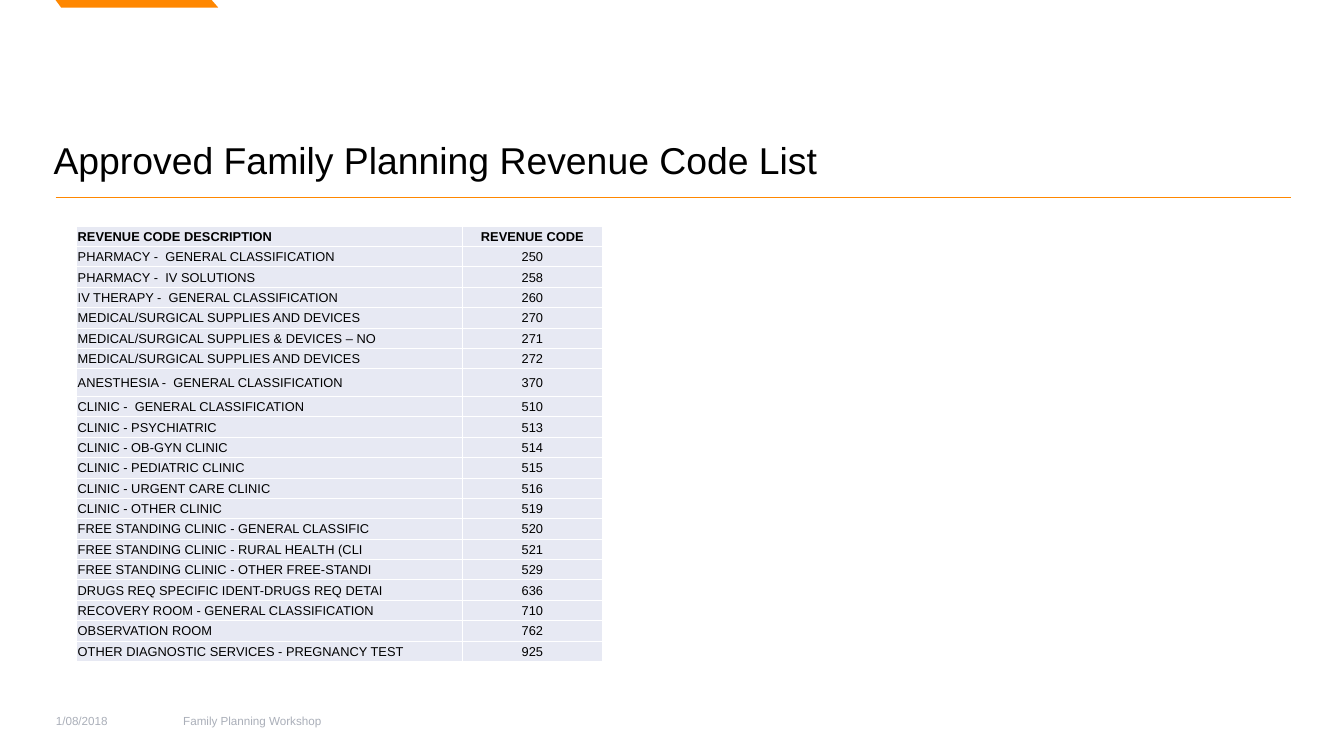
from pptx import Presentation, util as u
from pptx.dml.color import RGBColor
from pptx.enum import shapes, text
from pptx.oxml import ns, xmlchemy

Cm = u.Cm

REVENUE_CODES = [
    ("REVENUE CODE DESCRIPTION", "REVENUE CODE"),
    ("PHARMACY -  GENERAL CLASSIFICATION", "250"),
    ("PHARMACY -  IV SOLUTIONS", "258"),
    ("IV THERAPY -  GENERAL CLASSIFICATION", "260"),
    ("MEDICAL/SURGICAL SUPPLIES AND DEVICES", "270"),
    ("MEDICAL/SURGICAL SUPPLIES & DEVICES – NO", "271"),
    ("MEDICAL/SURGICAL SUPPLIES AND DEVICES", "272"),
    ("ANESTHESIA -  GENERAL CLASSIFICATION", "370"),
    ("CLINIC -  GENERAL CLASSIFICATION", "510"),
    ("CLINIC - PSYCHIATRIC", "513"),
    ("CLINIC - OB-GYN CLINIC", "514"),
    ("CLINIC - PEDIATRIC CLINIC", "515"),
    ("CLINIC - URGENT CARE CLINIC", "516"),
    ("CLINIC - OTHER CLINIC", "519"),
    ("FREE STANDING CLINIC - GENERAL CLASSIFIC", "520"),
    ("FREE STANDING CLINIC - RURAL HEALTH (CLI", "521"),
    ("FREE STANDING CLINIC - OTHER FREE-STANDI", "529"),
    ("DRUGS REQ SPECIFIC IDENT-DRUGS REQ DETAI", "636"),
    ("RECOVERY ROOM - GENERAL CLASSIFICATION", "710"),
    ("OBSERVATION ROOM", "762"),
    ("OTHER DIAGNOSTIC SERVICES - PREGNANCY TEST", "925"),
]
TALL_ROW = 7


def colour(value):
    return RGBColor.from_string(value)


class PageBuilder:
    FONT, INK, ACCENT = "Arial", "000000", "FF8700"
    MUTED, CELL, BORDER = "AAAFB9", "E7E9F3", "FFFFFF"

    def __init__(self, deck):
        self.page = deck.slides.add_slide(deck.slide_layouts[5])

    def style(self, para, size, ink, bold=False, align=text.PP_ALIGN.LEFT):
        para.alignment = align
        para.font.name, para.font.size, para.font.bold = self.FONT, u.Pt(size), bold
        para.font.color.rgb = colour(ink)

    def frame(self, box, words, size, ink, anchor, inset_x, inset_y):
        frame = box.text_frame
        frame.text = words
        frame.word_wrap = True
        frame.auto_size = text.MSO_AUTO_SIZE.NONE
        frame.vertical_anchor = anchor
        frame.margin_left = frame.margin_right = Cm(inset_x)
        frame.margin_top = frame.margin_bottom = Cm(inset_y)
        self.style(frame.paragraphs[0], size, ink)

    def title(self, words, left, top, width, height):
        box = self.page.shapes.title
        box.left, box.top, box.width, box.height = map(Cm, (left, top, width, height))
        self.frame(box, words, 32, self.INK, text.MSO_ANCHOR.TOP, 0.25, 0.25)

    def footer(self, words, left, width):
        box = self.page.shapes.add_textbox(Cm(left), Cm(21.18), Cm(width), Cm(1.22))
        self.frame(box, words, 10, self.MUTED, text.MSO_ANCHOR.MIDDLE, 0.36, 0.18)

    def rule(self, left, right, top):
        line = self.page.shapes.add_connector(
            shapes.MSO_CONNECTOR.STRAIGHT, Cm(left), Cm(top), Cm(right), Cm(top))
        line.line.color.rgb = colour(self.ACCENT)
        line.line.width = u.Pt(1)
        line._element.spPr.append(xmlchemy.OxmlElement("a:effectLst"))

    def tab(self, corners):
        points = [(Cm(x), Cm(y)) for x, y in corners]
        outline = self.page.shapes.build_freeform(*points[0])
        outline.add_line_segments(points[1:], close=True)
        shape = outline.convert_to_shape()
        shape.shadow.inherit = False
        shape.fill.solid()
        shape.fill.fore_color.rgb = colour(self.ACCENT)
        shape.line.fill.background()

    def borders(self, cell):
        properties = cell._tc.get_or_add_tcPr()
        for position, side in enumerate(("a:lnL", "a:lnR", "a:lnT", "a:lnB")):
            line = xmlchemy.OxmlElement(side)
            line.set("w", str(u.Pt(1)))
            fill = xmlchemy.OxmlElement("a:solidFill")
            tint = xmlchemy.OxmlElement("a:srgbClr")
            tint.set("val", self.BORDER)
            fill.append(tint)
            line.append(fill)
            properties.insert(position, line)

    def cell(self, cell, words, bold, align):
        cell.text = words
        cell.vertical_anchor = text.MSO_ANCHOR.MIDDLE
        cell.margin_left = cell.margin_right = cell.margin_top = Cm(0.03)
        cell.margin_bottom = 0
        cell.fill.solid()
        cell.fill.fore_color.rgb = colour(self.CELL)
        self.borders(cell)
        self.style(cell.text_frame.paragraphs[0], 11, self.INK, bold, align)

    def table(self, rows, left, top, widths, height, tall_row, tall_height):
        table = self.page.shapes.add_table(
            len(rows), len(widths), Cm(left), Cm(top), Cm(sum(widths)), Cm(height)).table
        for column, width in zip(table.columns, widths):
            column.width = Cm(width)
        row_height = (height - tall_height) / (len(rows) - 1)
        aligns = (text.PP_ALIGN.LEFT, text.PP_ALIGN.CENTER)
        for r, row in enumerate(rows):
            table.rows[r].height = Cm(tall_height if r == tall_row else row_height)
            for c, words in enumerate(row):
                self.cell(table.cell(r, c), words, r == 0, aligns[c])


def main():
    deck = Presentation()
    deck.slide_width, deck.slide_height = Cm(40.64), Cm(22.86)
    builder = PageBuilder(deck)

    # Heading with its accent tab and rule
    builder.rule(1.68, 39.04, 5.97)
    builder.tab([(1.68, 0), (1.85, 0.23), (6.6, 0.23), (6.4, 0)])
    builder.title("Approved Family Planning Revenue Code List", 1.37, 3.89, 37.72, 2.24)

    # Footer
    builder.footer("1/08/2018", 1.33, 3.84)
    builder.footer("Family Planning Workshop", 5.18, 20.88)

    # Revenue codes
    builder.table(REVENUE_CODES, 2.32, 6.84, (11.67, 4.22), 13.16, TALL_ROW, 0.84)

    deck.save("out.pptx")


if __name__ == "__main__":
    main()
